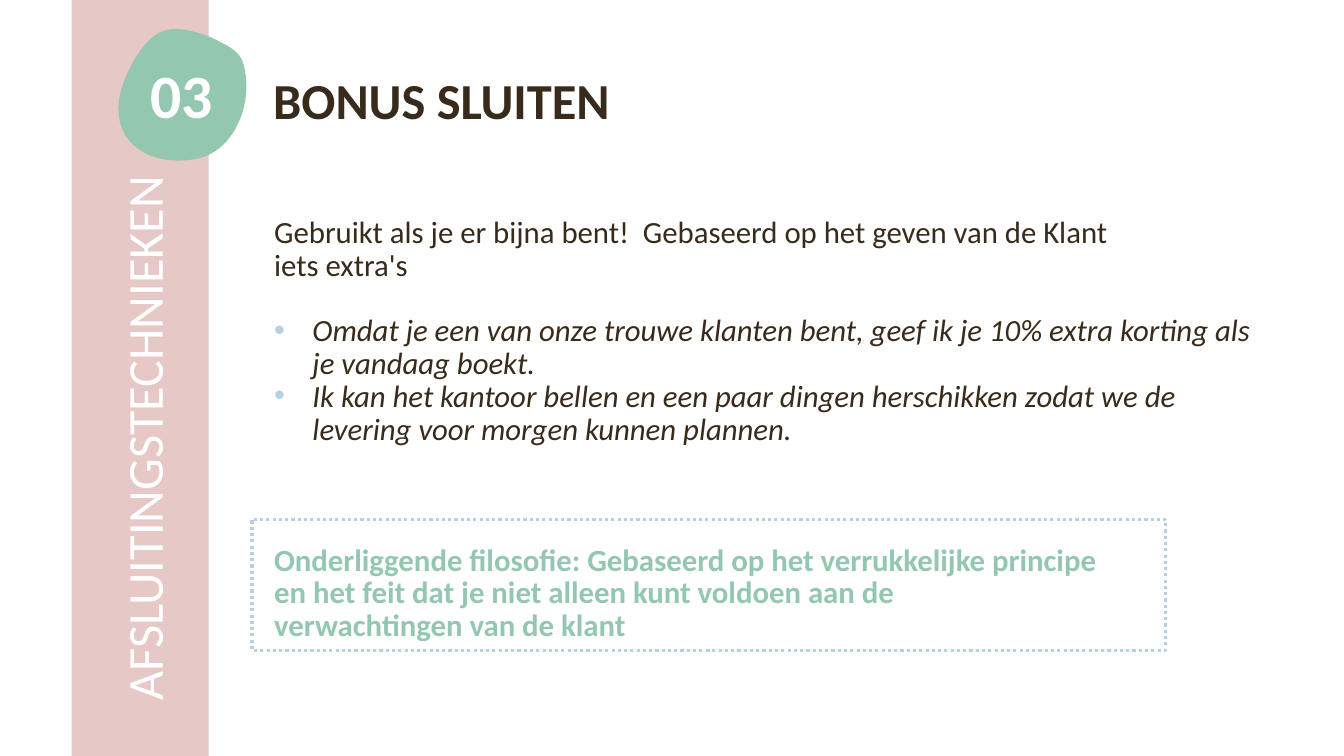
from lxml.etree import SubElement
from pptx import Presentation
from pptx.dml.color import RGBColor
from pptx.enum.dml import MSO_LINE
from pptx.enum.shapes import MSO_SHAPE
from pptx.enum.text import MSO_ANCHOR, MSO_AUTO_SIZE, PP_ALIGN
from pptx.oxml.ns import qn
from pptx.util import Inches, Pt

# Content
TITLE = "BONUS SLUITEN"
CHAPTER = "AFSLUITINGSTECHNIEKEN"
NUMBER = "03"
LINES = [  # style, blank lines before, text
    ("plain", 0, "Gebruikt als je er bijna bent!  Gebaseerd op het geven van de Klant"),
    ("plain", 0, "iets extra's"),
    ("quote", 1, "Omdat je een van onze trouwe klanten bent, geef ik je 10% extra korting als je vandaag boekt."),
    ("quote", 0, "Ik kan het kantoor bellen en een paar dingen herschikken zodat we de levering voor morgen kunnen plannen."),
    ("idea", 3, "Onderliggende filosofie: Gebaseerd op het verrukkelijke principe"),
    ("idea", 0, "en het feit dat je niet alleen kunt voldoen aan de"),
    ("idea", 0, "verwachtingen van de klant"),
]

# Look
DARK, GREEN, PINK, BLUE, WHITE = "382B1B", "94C7B0", "E6C8C7", "B6D1E1", "FFFFFF"
LEADING = 23.4
STYLES = {
    "plain": dict(size=22, color=DARK, bold=False, italic=False),
    "quote": dict(size=22, color=DARK, bold=False, italic=True),
    "idea": dict(size=22, color=GREEN, bold=True, italic=False),
    "title": dict(size=36, color=DARK, bold=True),
    "chapter": dict(size=36, color=WHITE),
    "number": dict(size=44, color=WHITE, bold=True),
}

# Places: left, top, width, height in percent of the slide
TITLE_BOX = (19.58, 8.4, 65.27, 10.53)
BODY_BOX = (19.65, 28, 75.24, 68.13)
STRIP_BOX = (5.33, 0, 10.2, 100)
CHAPTER_BOX = (-14.78, 36.93, 55.36, 15.6)
IDEA_BOX = (18.75, 68.67, 67.97, 17.33)
NUMBER_BOX = (8.78, 12.27, 9.45, 14)

# Blob outline in inches: start, then two control points and an end per curve
BLOB_START = (1.94, 0.32)
BLOB_CURVES = [
    ((1.77, 0.27), (1.6, 0.26), (1.46, 0.42)),
    ((1.33, 0.56), (1.21, 0.8), (1.18, 0.99)),
    ((1.12, 1.45), (1.52, 1.65), (1.93, 1.58)),
    ((2.33, 1.52), (2.53, 1), (2.41, 0.62)),
    ((2.37, 0.51), (2.27, 0.46), (2.17, 0.41)),
    ((2.1, 0.37), (2.02, 0.34), BLOB_START),
]
STEPS = 16

prs = Presentation()
prs.slide_width, prs.slide_height = Inches(13.33), Inches(7.5)
s = prs.slides.add_slide(prs.slide_layouts[1])


def rgb(color):
    return RGBColor.from_string(color)


def place(box):
    sides = (prs.slide_width, prs.slide_height) * 2
    return [round(side * share / 100) for side, share in zip(sides, box)]


def move(sp, box):
    sp.left, sp.top, sp.width, sp.height = place(box)


def paint(sp, color):
    sp.shadow.inherit = False
    sp.fill.solid()
    sp.fill.fore_color.rgb = rgb(color)
    sp.line.fill.background()


def prepare(sp, anchor=MSO_ANCHOR.TOP):
    tf = sp.text_frame
    tf.word_wrap, tf.auto_size, tf.vertical_anchor = True, MSO_AUTO_SIZE.NONE, anchor
    return tf


def write(p, text, style, spacing, before=0, align=PP_ALIGN.LEFT):
    p.alignment, p.line_spacing, p.space_before = align, spacing, Pt(before)
    r = p.add_run()
    r.text = text
    r.font.name = "Calibri"
    for name, value in STYLES[style].items():
        if name == "color":
            r.font.color.rgb = rgb(value)
        else:
            setattr(r.font, name, Pt(value) if name == "size" else value)


def set_bullet(p, shown):
    pPr = p._p.get_or_add_pPr()
    indent = Inches(0.38) if shown else 0
    pPr.set("marL", str(indent))
    pPr.set("indent", str(-indent))
    if shown:
        SubElement(SubElement(pPr, qn("a:buClr")), qn("a:srgbClr"), val=BLUE)
        SubElement(pPr, qn("a:buFont"), typeface="Arial")
        SubElement(pPr, qn("a:buChar"), char="•")
    else:
        SubElement(pPr, qn("a:buNone"))


def curve_points(start, curves):
    """Yield the outline in whole EMU, since a freeform rounds its points."""
    yield tuple(Inches(v) for v in start)
    for c1, c2, end in curves:
        for step in range(1, STEPS + 1):
            t = step / STEPS
            u = 1 - t
            yield tuple(Inches(u**3 * a + 3 * u * u * t * b + 3 * u * t * t * c + t**3 * d)
                        for a, b, c, d in zip(start, c1, c2, end))
        start = end


# Title
title = s.shapes.title
move(title, TITLE_BOX)
write(prepare(title, MSO_ANCHOR.MIDDLE).paragraphs[0], TITLE, "title", 0.9)

# Body
body = s.placeholders[1]
move(body, BODY_BOX)
tf = prepare(body)
for i, (style, blanks, text) in enumerate(LINES):
    p = tf.add_paragraph() if i else tf.paragraphs[0]
    set_bullet(p, style == "quote")
    write(p, text, style, Pt(LEADING), blanks * LEADING)

# Side strip with upright chapter name
strip = s.shapes.add_shape(MSO_SHAPE.RECTANGLE, *place(STRIP_BOX))
paint(strip, PINK)
chapter = s.shapes.add_textbox(*place(CHAPTER_BOX))
chapter.rotation = 270
write(prepare(chapter).paragraphs[0], CHAPTER, "chapter", 0.9)

# Dotted frame around the idea
frame = s.shapes.add_shape(MSO_SHAPE.RECTANGLE, *place(IDEA_BOX))
frame.shadow.inherit = False
frame.fill.background()
frame.line.color.rgb = rgb(BLUE)
frame.line.width = Pt(2.25)
frame.line.dash_style = MSO_LINE.ROUND_DOT

# Numbered blob
first, *rest = curve_points(BLOB_START, BLOB_CURVES)
builder = s.shapes.build_freeform(*first)
builder.add_line_segments(rest, close=True)
paint(builder.convert_to_shape(), GREEN)
number = s.shapes.add_textbox(*place(NUMBER_BOX))
write(prepare(number).paragraphs[0], NUMBER, "number", Pt(LEADING), align=PP_ALIGN.CENTER)

prs.save("out.pptx")
